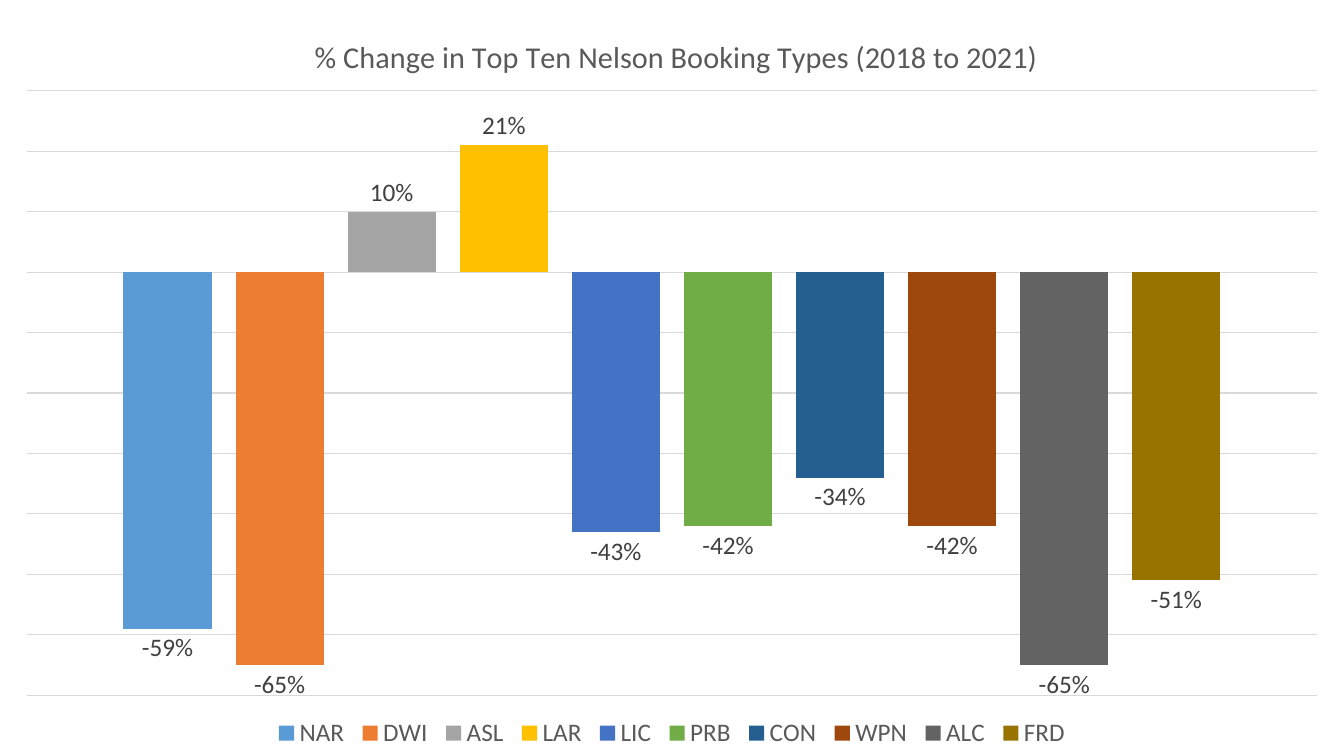
from dataclasses import dataclass

from lxml import etree
from pptx import Presentation
from pptx import util as u
from pptx.chart import data as cd
from pptx.dml.color import RGBColor
from pptx.enum import chart as ec
from pptx.oxml import ns

FONT = "Calibri"
BLACK = RGBColor(0x00, 0x00, 0x00)
GRAY = RGBColor(0x59, 0x59, 0x59)
DARK = RGBColor(0x40, 0x40, 0x40)
GRID = RGBColor(0xD9, 0xD9, 0xD9)
WIDE, HIGH = u.Pt(960), u.Pt(540)


@dataclass(frozen=True)
class Booking:
    name: str
    change: float
    color: RGBColor


BOOKINGS = [
    Booking("NAR", -0.59, RGBColor(0x5B, 0x9B, 0xD5)),
    Booking("DWI", -0.65, RGBColor(0xED, 0x7D, 0x31)),
    Booking("ASL", 0.10, RGBColor(0xA5, 0xA5, 0xA5)),
    Booking("LAR", 0.21, RGBColor(0xFF, 0xC0, 0x00)),
    Booking("LIC", -0.43, RGBColor(0x44, 0x72, 0xC4)),
    Booking("PRB", -0.42, RGBColor(0x70, 0xAD, 0x47)),
    Booking("CON", -0.34, RGBColor(0x25, 0x5E, 0x91)),
    Booking("WPN", -0.42, RGBColor(0x9E, 0x48, 0x0E)),
    Booking("ALC", -0.65, RGBColor(0x63, 0x63, 0x63)),
    Booking("FRD", -0.51, RGBColor(0x99, 0x73, 0x00)),
]


def style(font, size: float, color: RGBColor, bold: bool = False) -> None:
    font.name, font.size, font.bold = FONT, u.Pt(size), bold
    font.color.rgb = color


def write(frame, text: str, **form) -> None:
    """Put formatted text in a text frame."""
    run = frame.paragraphs[0].add_run()
    run.text = text
    style(run.font, **form)


def place(part, index: int, **box: float) -> None:
    """Lay out a chart part by fractions of the chart's size."""
    for old in part.findall(ns.qn("c:layout")):
        part.remove(old)
    layout = etree.Element(ns.qn("c:layout"))
    manual = etree.SubElement(layout, ns.qn("c:manualLayout"))
    modes = {"xMode": "edge", "yMode": "edge"}
    if part.tag == ns.qn("c:plotArea"):
        modes = {"layoutTarget": "inner", **modes}
    for tag, value in {**modes, **box}.items():
        etree.SubElement(manual, ns.qn(f"c:{tag}")).set("val", str(value))
    part.insert(index, layout)


def add_bars(slide):
    data = cd.CategoryChartData(number_format="0%")
    data.categories = ["1"]
    for item in BOOKINGS:
        data.add_series(item.name, [item.change])
    kind = ec.XL_CHART_TYPE.COLUMN_CLUSTERED
    chart = slide.shapes.add_chart(kind, 0, 0, WIDE, HIGH, data).chart
    style(chart.font, 18, BLACK)

    # Bars and their labels
    plot = chart.plots[0]
    plot.gap_width, plot.overlap = 219, -27
    plot.vary_by_categories = False
    for item, bar in zip(BOOKINGS, plot.series):
        bar.invert_if_negative = False
        bar.format.fill.solid()
        bar.format.fill.fore_color.rgb = item.color
        labels = bar.data_labels
        labels.show_value = True
        labels.number_format, labels.number_format_is_linked = "0%", False
        labels.position = ec.XL_LABEL_POSITION.OUTSIDE_END
        style(labels.font, 18, DARK)
    return chart


def set_axes(chart) -> None:
    chart.category_axis.visible = False
    axis = chart.value_axis
    axis.visible = False
    axis.minimum_scale, axis.maximum_scale, axis.major_unit = -0.7, 0.3, 0.1
    axis.tick_labels.number_format = "0%"
    axis.tick_labels.number_format_is_linked = False
    axis.has_major_gridlines = True
    line = axis.major_gridlines.format.line
    line.color.rgb, line.width = GRID, u.Pt(0.75)


def main() -> None:
    deck = Presentation()
    deck.slide_width, deck.slide_height = WIDE, HIGH
    slide = deck.slides.add_slide(deck.slide_layouts[6])
    chart = add_bars(slide)
    set_axes(chart)

    # Title
    chart.has_title = True
    title = chart.chart_title
    write(title.text_frame, "% Change in Top Ten Nelson Booking Types (2018 to 2021)",
          size=21.6, color=GRAY)
    title.include_in_layout = False

    # Legend
    chart.has_legend = True
    legend = chart.legend
    legend.position = ec.XL_LEGEND_POSITION.BOTTOM
    legend.include_in_layout = False
    style(legend.font, 18, GRAY)

    # Layout of the parts
    place(title._element, 1, x=0.23, y=0.04)
    place(legend._element, 1, x=0.2, y=0.95, w=0.6, h=0.05)
    place(chart._chartSpace.chart.plotArea, 0, x=0.02, y=0.12, w=0.96, h=0.8)

    deck.save("out.pptx")


if __name__ == "__main__":
    main()
